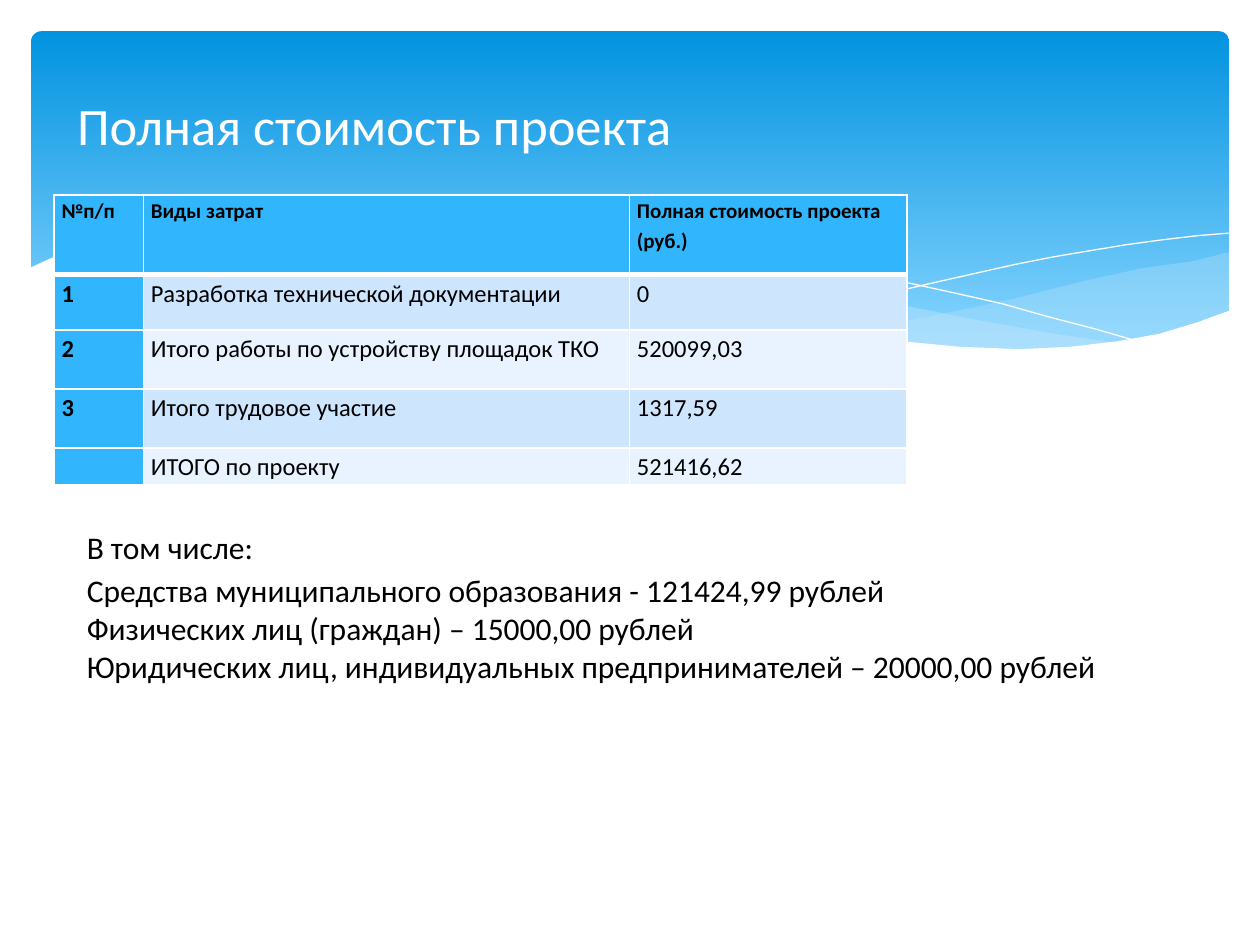
from lxml import etree
from pptx import Presentation
from pptx.dml.color import RGBColor
from pptx.enum import shapes, text
from pptx.oxml.ns import qn
from pptx.util import Cm, Pt

FONT = "Calibri"
COLORS = {"top": "0293E0", "bottom": "83D3FE", "wave": "C6E7FC", "white": "FFFFFF",
          "black": "000000", "accent": "31B6FD", "band": "CEE5FE", "pale": "E8F3FF"}
TITLE = "Полная стоимость проекта"
ROWS = [
    ("№п/п", "Виды затрат", "Полная стоимость проекта (руб.)"),
    ("1", "Разработка технической документации", "0"),
    ("2", "Итого работы по устройству площадок ТКО", "520099,03"),
    ("3", "Итого трудовое участие", "1317,59"),
    ("", "ИТОГО по проекту", "521416,62"),
]
COL_WIDTHS = [1.8, 9.8, 5.59]
ROW_HEIGHTS = [1.6, 1.12, 1.19, 1.19, 0.74]
FUNDING = [
    ("В том числе:", 1),
    ("Средства муниципального образования - 121424,99 рублей", 1.15),
    ("Физических лиц (граждан) – 15000,00 рублей", 1),
    ("Юридических лиц, индивидуальных предпринимателей – 20000,00 рублей", 1),
]
RIGHT_WAVE = [
    (24.78, 5.08), (24.08, 5.26), (23.01, 5.41), (21.87, 5.66), (20.45, 6.02),
    (19.13, 6.3), (17.93, 6.53), (16.79, 6.73), (17.91, 6.88), (18.92, 6.99),
    (19.84, 7.04), (20.68, 7.06), (21.44, 7.04), (22.15, 6.96), (22.78, 6.86),
    (23.39, 6.73), (23.93, 6.58), (24.46, 6.4), (24.78, 6.27),
]
MIDDLE_WAVE = [
    (22.68, 6.93), (21.26, 6.73), (19.69, 6.45), (17.93, 6.1), (15.98, 5.64),
    (14.83, 5.36), (13.74, 5.16), (12.75, 4.98), (11.23, 4.8), (9.65, 4.7),
    (8.74, 4.72), (7.26, 4.85), (8.2, 4.98), (9.19, 5.16), (10.26, 5.36),
    (11.4, 5.64), (13.46, 6.1), (15.27, 6.48), (16.51, 6.71), (17.65, 6.86),
    (18.69, 6.99), (19.63, 7.04), (20.5, 7.06), (21.54, 7.04), (22.25, 6.99),
]
FALLING_LINE = [
    (7.85, 4.95), (8.51, 4.85), (9.5, 4.78), (10.57, 4.75), (11.43, 4.78),
    (12.42, 4.83), (13.54, 4.93), (14.78, 5.08), (16.15, 5.28), (17.65, 5.56),
    (19.3, 5.92), (20.19, 6.12), (21.11, 6.38), (22.07, 6.63), (23.04, 6.91),
]
RISING_LINE = [
    (15.57, 6.53), (16.59, 6.25), (17.65, 5.97), (19, 5.66), (20.47, 5.33),
    (21.23, 5.18), (22, 5.05), (22.73, 4.93), (23.47, 4.83), (24.16, 4.75), (24.77, 4.7),
]
WHITE_WAVE = [
    (24.82, 6.25), (24.13, 6.5), (23.37, 6.73), (22.53, 6.88), (21.59, 6.99),
    (20.55, 7.04), (19.33, 6.99), (17.98, 6.86), (16.46, 6.65), (14.71, 6.35),
    (12.78, 5.92), (11.35, 5.59), (9.93, 5.26), (8.64, 5), (7.42, 4.83),
    (6.35, 4.72), (5.36, 4.67), (4.5, 4.67), (3.71, 4.7), (3.02, 4.75),
    (2.41, 4.85), (1.93, 4.95), (1.5, 5.05), (1.02, 5.21), (0.58, 5.41),
    (0.58, 8.36), (24.82, 8.36),
]


def rgb(name):
    return RGBColor.from_string(COLORS[name])


def paint(fill, name, alpha=None):
    fill.solid()
    fill.fore_color.rgb = rgb(name)
    if alpha is not None:
        clr = fill._xPr.find(".//" + qn("a:srgbClr"))
        etree.SubElement(clr, qn("a:alpha"), val=str(alpha * 1000))


def draw_curve(s, points, closed=True):
    points = [(Cm(x), Cm(y)) for x, y in points]
    builder = s.shapes.build_freeform(*points[0], scale=1.0)
    builder.add_line_segments(points[1:], close=closed)
    sp = builder.convert_to_shape()
    sp.shadow.inherit = False
    return sp


def format_text(p, size, color="black", bold=False, spacing=1):
    p.alignment = text.PP_ALIGN.LEFT
    p.line_spacing = spacing
    p.font.name = FONT
    p.font.size = Pt(size)
    p.font.bold = bold
    p.font.color.rgb = rgb(color)


def set_borders(cell, widths):
    tc_pr = cell._tc.get_or_add_tcPr()
    for i, (side, width) in enumerate(widths.items()):
        ln = etree.Element(qn("a:" + side), w=str(Pt(width)))
        fill = etree.SubElement(ln, qn("a:solidFill"))
        etree.SubElement(fill, qn("a:srgbClr"), val=COLORS["white"])
        tc_pr.insert(i, ln)


def add_background(s):
    sp = s.shapes.add_shape(shapes.MSO_SHAPE.ROUNDED_RECTANGLE,
                            Cm(0.63), Cm(0.63), Cm(24.15), Cm(6.86))
    sp.adjustments[0] = 0.03
    sp.shadow.inherit = False
    sp.line.fill.background()
    sp.fill.gradient()
    sp.fill.gradient_angle = 270
    for stop, name, position in zip(sp.fill.gradient_stops, ("top", "bottom"), (0, 0.9)):
        stop.color.rgb = rgb(name)
        stop.position = position

    for points, alpha in ((RIGHT_WAVE, 29), (MIDDLE_WAVE, 40)):
        sp = draw_curve(s, points)
        paint(sp.fill, "wave", alpha)
        sp.line.fill.background()
    for points in (FALLING_LINE, RISING_LINE):
        sp = draw_curve(s, points, closed=False)
        sp.fill.background()
        sp.line.color.rgb = rgb("white")
        sp.line.width = Pt(0)
    sp = draw_curve(s, WHITE_WAVE)
    paint(sp.fill, "white")
    sp.line.fill.background()


def add_costs(s):
    table = s.shapes.add_table(len(ROWS), len(COL_WIDTHS), Cm(1.09), Cm(3.93),
                               Cm(sum(COL_WIDTHS)), Cm(sum(ROW_HEIGHTS))).table
    table.first_row = table.horz_banding = False
    for column, width in zip(table.columns, COL_WIDTHS):
        column.width = Cm(width)
    for i, (values, height) in enumerate(zip(ROWS, ROW_HEIGHTS)):
        table.rows[i].height = Cm(height)
        for j, value in enumerate(values):
            cell = table.cell(i, j)
            heading = i == 0 or j == 0
            cell.text = value
            cell.margin_left = cell.margin_right = Cm(0.15)
            cell.margin_top = cell.margin_bottom = 0
            format_text(cell.text_frame.paragraphs[0], 14 if i else 12,
                        bold=heading, spacing=1.15)
            paint(cell.fill, "accent" if heading else "band" if i % 2 else "pale")
            set_borders(cell, {"lnL": 1, "lnR": 1, "lnT": 3 if i == 1 else 1,
                               "lnB": 1 if i else 3})


def add_title(s):
    title = s.shapes.title
    title.left, title.top, title.width, title.height = Cm(1.3), Cm(1.73), Cm(22.86), Cm(1.57)
    tf = title.text_frame
    tf.text = TITLE
    tf.auto_size = text.MSO_AUTO_SIZE.NONE
    tf.vertical_anchor = text.MSO_ANCHOR.MIDDLE
    format_text(tf.paragraphs[0], 30, "white")
    s.shapes._spTree.append(title._element)


def add_funding(s):
    tf = s.shapes.add_textbox(Cm(1.5), Cm(10.52), Cm(21.79), Cm(3.45)).text_frame
    tf.word_wrap = True
    tf.text = "\n".join(line for line, _ in FUNDING)
    for p, (_, spacing) in zip(tf.paragraphs, FUNDING):
        format_text(p, 18, spacing=spacing)


def main():
    prs = Presentation()
    prs.slide_width, prs.slide_height = Cm(25.4), Cm(19.05)
    s = prs.slides.add_slide(prs.slide_layouts[5])
    add_background(s)
    add_costs(s)
    add_title(s)
    add_funding(s)
    prs.save("out.pptx")


if __name__ == "__main__":
    main()
